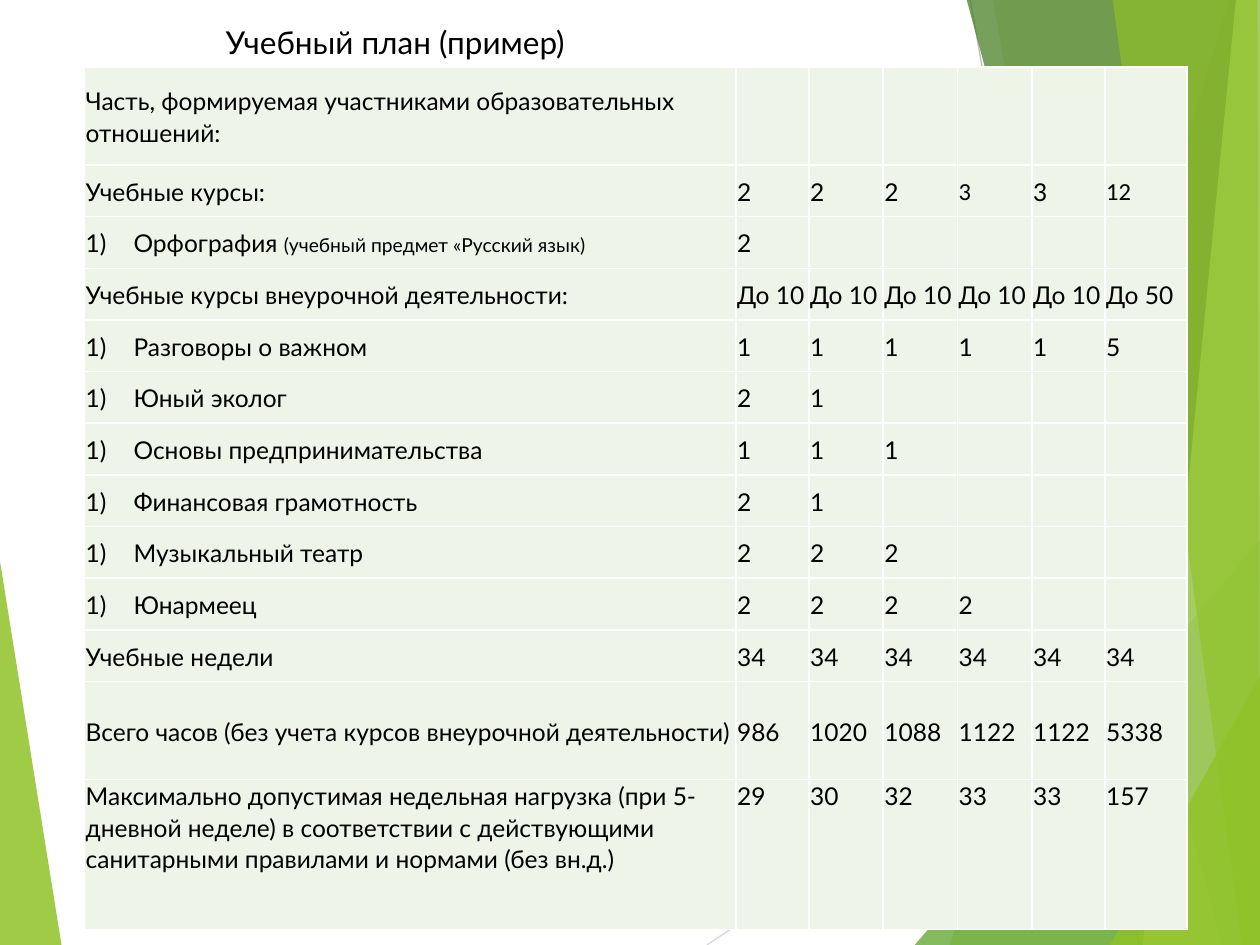
"""Build a slide with a sample school curriculum table."""
from lxml.etree import SubElement
from pptx import Presentation
from pptx.dml.color import RGBColor
from pptx.enum.shapes import MSO_CONNECTOR
from pptx.enum.text import MSO_ANCHOR, MSO_AUTO_SIZE, PP_ALIGN
from pptx.oxml import parse_xml
from pptx.oxml.ns import nsdecls, qn
from pptx.util import Inches, Pt

COLORS = {
    "text": "000000", "cell": "EEF4E8", "border": "FFFFFF",
    "light_line": "D9D9D9", "gray_line": "BFBFBF",
    "green": "90C226", "leaf": "54A021", "forest": "3F7819", "lime": "C0E474",
}
FONT = "Lato"
LINES = [
    ((5.61, 7.5), (10.01, 4.57), "light_line"),
    ((7.7, 0), (9.04, 7.5), "gray_line"),
]
FACETS = [
    ("green", 85, [(-0.01, 4.39), (0.49, 7.51), (-0.01, 7.5)]),
    ("green", 30, [(9.75, 0), (7.54, 7.5), (10.02, 7.51), (10.01, 0)]),
    ("green", 20, [(7.88, -0.01), (9.19, 7.5), (10.01, 7.5), (10.01, -0.01)]),
    ("leaf", 72, [(7.26, 7.5), (10, 4.29), (10.01, 7.5)]),
    ("forest", 70, [(7.67, -0.01), (9.7, 7.5), (10.01, 7.5), (10.01, -0.01)]),
    ("lime", 70, [(9.81, -0.01), (9.07, 7.5), (10.01, 7.5), (10, -0.01)]),
    ("green", 65, [(8.83, -0.01), (9.86, 7.5), (10, 7.5), (9.98, -0.01)]),
    ("green", 80, [(8.81, 7.5), (10.01, 5.35), (10.01, 7.5)]),
]
COLUMN_WIDTHS = [5.17, 0.58, 0.59, 0.59, 0.59, 0.58, 0.65]
ROW_HEIGHTS = [0.78] + [0.41] * 10 + [0.78, 1.19]
ROWS = [
    ("Часть, формируемая участниками образовательных отношений:", []),
    ("Учебные курсы:", ["2", "2", "2", "3", "3", "12"]),
    ("Орфография ", ["2"]),
    ("Учебные курсы внеурочной деятельности:", ["До 10"] * 5 + ["До 50"]),
    ("Разговоры о важном", ["1"] * 5 + ["5"]),
    ("Юный эколог", ["2", "1"]),
    ("Основы предпринимательства", ["1"] * 3),
    ("Финансовая грамотность", ["2", "1"]),
    ("Музыкальный театр", ["2"] * 3),
    ("Юнармеец", ["2"] * 4),
    ("Учебные недели", ["34"] * 6),
    ("Всего часов (без учета курсов внеурочной деятельности)",
     ["986", "1020", "1088", "1122", "1122", "5338"]),
    ("Максимально допустимая недельная нагрузка (при 5-дневной неделе) "
     "в соответствии с действующими санитарными правилами и нормами (без вн.д.)",
     ["29", "30", "32", "33", "33", "157"]),
]
NUMBERED_ROWS = {2, 4, 5, 6, 7, 8, 9}
SUBJECT_ROW = 2
SUBJECT_NOTE = "(учебный предмет «Русский язык)"
CALIBRI_CELLS = {(1, 4), (1, 6)}


def rgb(name):
    """Return the named colour."""
    return RGBColor.from_string(COLORS[name])


def add_facet(slide, color, opacity, points):
    """Draw a translucent polygon."""
    corners = [(Inches(x), Inches(y)) for x, y in points]
    builder = slide.shapes.build_freeform(*corners[0])
    builder.add_line_segments(corners[1:], close=True)
    shape = builder.convert_to_shape()
    shape.shadow.inherit = False
    shape.fill.solid()
    shape.fill.fore_color.rgb = rgb(color)
    shape.line.fill.background()
    fill_color = shape.element.spPr.find(qn("a:solidFill"))[0]
    SubElement(fill_color, qn("a:alpha"), val=str(opacity * 1000))


def add_line(slide, start, end, color):
    """Draw a thin straight line."""
    line = slide.shapes.add_connector(
        MSO_CONNECTOR.STRAIGHT, *map(Inches, start + end))
    line.line.color.rgb = rgb(color)
    line.line.width = Pt(0.75)
    SubElement(line.element.spPr, qn("a:effectLst"))


def format_font(font, size, name=FONT):
    """Set the typeface, size and text colour."""
    font.name = name
    font.size = Pt(size)
    font.color.rgb = rgb("text")


def place_title(slide, text):
    """Move the title placeholder to the top and fill it."""
    title = slide.shapes.title
    title.left, title.top = Inches(1.69), Inches(0.13)
    title.width, title.height = Inches(7.09), Inches(0.4)
    frame = title.text_frame
    frame.text = text
    frame.word_wrap = True
    frame.auto_size = MSO_AUTO_SIZE.SHAPE_TO_FIT_TEXT
    frame.vertical_anchor = MSO_ANCHOR.TOP
    paragraph = frame.paragraphs[0]
    paragraph.alignment = PP_ALIGN.LEFT
    format_font(paragraph.font, 18)


def number_paragraph(paragraph):
    """Give a paragraph a hanging number."""
    properties = paragraph._p.get_or_add_pPr()
    properties.set("marL", str(Inches(0.38)))
    properties.set("indent", str(-Inches(0.38)))
    numbering = parse_xml(
        f'<a:buAutoNum {nsdecls("a")} type="arabicParenR"/>')
    spacing_count = len(properties.findall(qn("a:lnSpc"))
                        + properties.findall(qn("a:spcAft")))
    properties.insert(spacing_count, numbering)


def style_cell(cell, anchor):
    """Set the margins, fill and white borders of a cell."""
    cell.margin_left = cell.margin_right = Inches(0.01)
    cell.margin_top = cell.margin_bottom = 0
    cell.vertical_anchor = anchor
    cell.fill.solid()
    cell.fill.fore_color.rgb = rgb("cell")
    properties = cell._tc.get_or_add_tcPr()
    for index, side in enumerate("LRTB"):
        properties.insert(index, parse_xml(
            f'<a:ln{side} {nsdecls("a")} w="{Pt(1)}"><a:solidFill>'
            f'<a:srgbClr val="{COLORS["border"]}"/></a:solidFill></a:ln{side}>'))


def write_cell(cell, text, font_name=FONT):
    """Write text in a cell and return its paragraph."""
    cell.text = text
    paragraph = cell.text_frame.paragraphs[0]
    paragraph.line_spacing = 1.07
    paragraph.space_after = Pt(8)
    format_font(paragraph.font, 14, font_name)
    return paragraph


def add_curriculum(slide):
    """Add the table of courses and hours."""
    table = slide.shapes.add_table(
        len(ROWS), len(COLUMN_WIDTHS), Inches(0.67), Inches(0.53),
        Inches(sum(COLUMN_WIDTHS)), Inches(sum(ROW_HEIGHTS))).table
    table.first_row = table.horz_banding = False
    for column, width in zip(table.columns, COLUMN_WIDTHS):
        column.width = Inches(width)
    for row, height in zip(table.rows, ROW_HEIGHTS):
        row.height = Inches(height)
    for row_index, (label, hours) in enumerate(ROWS):
        is_last = row_index == len(ROWS) - 1
        anchor = MSO_ANCHOR.TOP if is_last else MSO_ANCHOR.MIDDLE
        for cell in table.rows[row_index].cells:
            style_cell(cell, anchor)
        for column_index, text in enumerate([label] + hours):
            is_calibri = (row_index, column_index) in CALIBRI_CELLS
            write_cell(table.cell(row_index, column_index), text,
                       "Calibri" if is_calibri else FONT)
        if row_index in NUMBERED_ROWS:
            number_paragraph(
                table.cell(row_index, 0).text_frame.paragraphs[0])
    subject = table.cell(SUBJECT_ROW, 0).text_frame.paragraphs[0]
    note = subject.add_run()
    note.text = SUBJECT_NOTE
    note.font.size = Pt(11)


def main():
    """Build and save the presentation."""
    presentation = Presentation()
    presentation.slide_width, presentation.slide_height = Inches(10), Inches(7.5)
    slide = presentation.slides.add_slide(presentation.slide_layouts[5])
    add_facet(slide, *FACETS[0])
    for line in LINES:
        add_line(slide, *line)
    for facet in FACETS[1:]:
        add_facet(slide, *facet)
    place_title(slide, "Учебный план (пример)")
    add_curriculum(slide)
    presentation.save("out.pptx")


if __name__ == "__main__":
    main()
